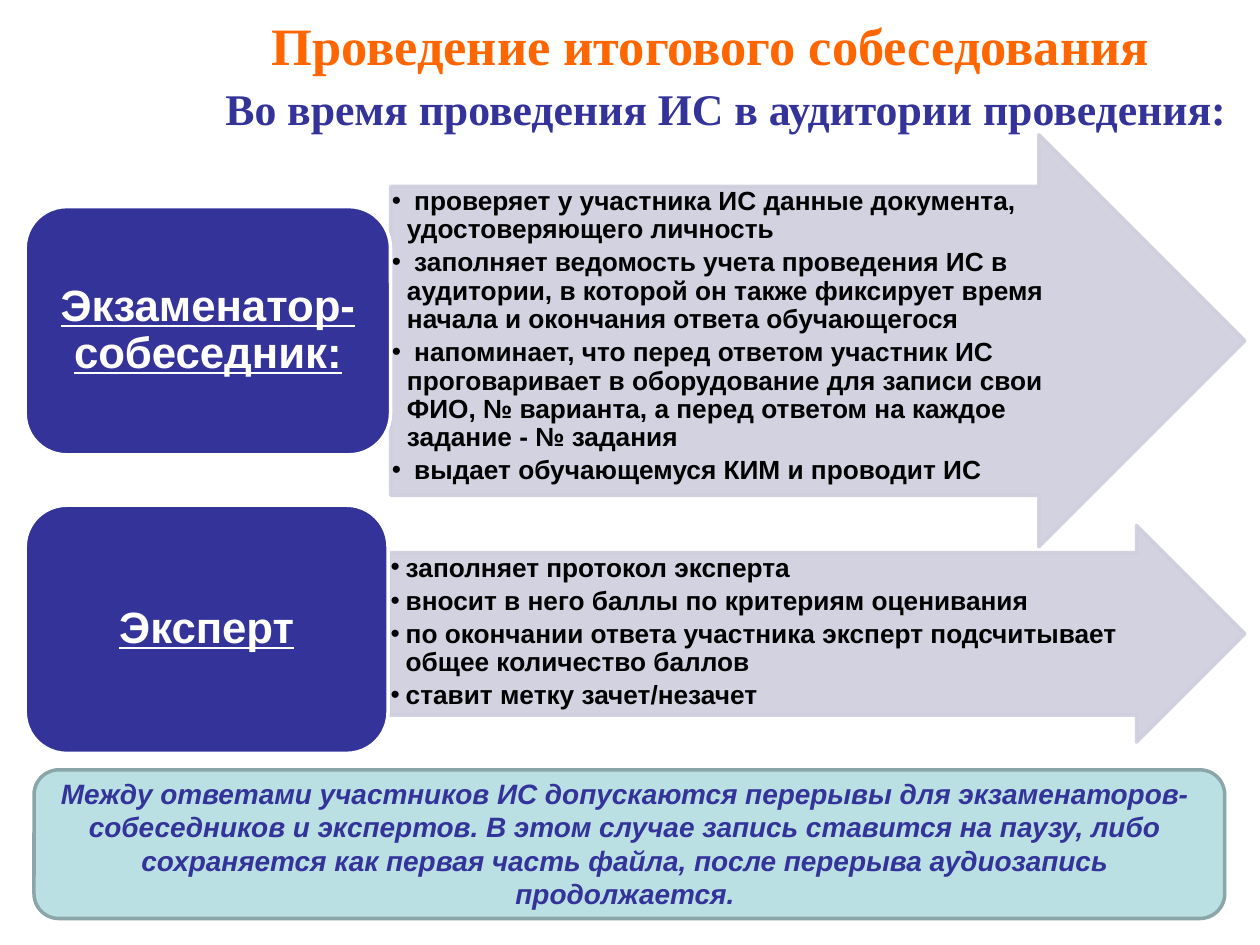
import dataclasses

import pptx
import pptx.dml.color
import pptx.enum.shapes
import pptx.enum.text
import pptx.oxml
import pptx.oxml.ns
import pptx.util

Inches = pptx.util.Inches
Pt = pptx.util.Pt
Shapes = pptx.enum.shapes.MSO_SHAPE
Align = pptx.enum.text.PP_ALIGN
Anchor = pptx.enum.text.MSO_ANCHOR


@dataclasses.dataclass(frozen=True)
class Theme:
    orange: str = "FF6600"
    navy: str = "333399"
    lavender: str = "CECEDE"
    aqua: str = "BBE0E3"
    aqua_edge: str = "8AA6A8"
    white: str = "FFFFFF"
    black: str = "000000"
    heading_font: str = "Times New Roman"
    body_font: str = "Arial"
    title_size: int = 30
    subtitle_size: int = 25
    role_size: int = 25
    duty_size: int = 15
    note_size: int = 16
    line_width: int = 2


THEME = Theme()

EXAMINER_DUTIES = [
    " проверяет у участника ИС данные документа, удостоверяющего личность",
    " заполняет ведомость учета проведения ИС в аудитории, в которой он также "
    "фиксирует время начала и окончания ответа обучающегося",
    " напоминает, что перед ответом участник ИС проговаривает в оборудование для "
    "записи свои ФИО, № варианта, а перед ответом на каждое задание - № задания",
    " выдает обучающемуся КИМ и проводит ИС",
]
EXPERT_DUTIES = [
    "заполняет протокол эксперта",
    "вносит в него баллы по критериям оценивания",
    "по окончании ответа участника эксперт подсчитывает общее количество баллов",
    "ставит метку зачет/незачет",
]
NOTE = (
    "Между ответами участников ИС допускаются перерывы для "
    "экзаменаторов-собеседников и экспертов. В этом случае запись ставится на "
    "паузу, либо сохраняется как первая часть файла, после перерыва аудиозапись "
    "продолжается."
)


def rgb(color):
    return pptx.dml.color.RGBColor.from_string(color)


def place(shape, box):
    shape.left, shape.top, shape.width, shape.height = map(Inches, box)


def set_frame(shape, anchor, horizontal=0.1, vertical=0.05):
    frame = shape.text_frame
    frame.word_wrap = True
    frame.auto_size = pptx.enum.text.MSO_AUTO_SIZE.NONE
    frame.vertical_anchor = anchor
    frame.margin_left = frame.margin_right = Inches(horizontal)
    frame.margin_top = frame.margin_bottom = Inches(vertical)
    return frame


def add_run(paragraph, text, font_name, size, color, italic=False, underline=False):
    run = paragraph.add_run()
    run.text = text
    run.font.name = font_name
    run.font.size = Pt(size)
    run.font.color.rgb = rgb(color)
    run.font.bold = True
    run.font.italic = italic
    run.font.underline = underline


def add_shape(slide, preset, box, fill, line):
    shape = slide.shapes.add_shape(preset, *map(Inches, box))
    shape.shadow.inherit = False
    shape.fill.solid()
    shape.fill.fore_color.rgb = rgb(fill)
    shape.line.color.rgb = rgb(line)
    shape.line.width = Pt(THEME.line_width)
    return shape


def add_arrow(slide, box):
    arrow = add_shape(slide, Shapes.RIGHT_ARROW, box, THEME.lavender, THEME.lavender)
    arrow.adjustments[0] = 0.75
    arrow.adjustments[1] = 0.5
    for color in arrow.element.spPr.iter(pptx.oxml.ns.qn("a:srgbClr")):
        color.append(pptx.oxml.parse_xml(
            f'<a:alpha {pptx.oxml.ns.nsdecls("a")} val="90000"/>'))
    return arrow


def add_bullet(paragraph, indent):
    properties = paragraph._p.get_or_add_pPr()
    properties.set("marL", str(Inches(indent)))
    properties.set("indent", str(-Inches(indent)))
    properties.append(pptx.oxml.parse_xml(
        f'<a:buChar {pptx.oxml.ns.nsdecls("a")} char="•"/>'))


def fill_duties(placeholder, box, duties):
    place(placeholder, box)
    frame = set_frame(placeholder, Anchor.TOP, 0.01, 0.01)
    for index, duty in enumerate(duties):
        paragraph = frame.add_paragraph() if index else frame.paragraphs[0]
        add_bullet(paragraph, 0.12)
        paragraph.alignment = Align.LEFT
        paragraph.line_spacing = 0.9
        paragraph.space_before = Pt(0)
        paragraph.space_after = Pt(2.7)
        add_run(paragraph, duty, THEME.body_font, THEME.duty_size, THEME.black)


def add_role(slide, box, text):
    role = add_shape(slide, Shapes.ROUNDED_RECTANGLE, box, THEME.navy, THEME.white)
    paragraph = set_frame(role, Anchor.MIDDLE).paragraphs[0]
    paragraph.alignment = Align.CENTER
    paragraph.line_spacing = 0.9
    add_run(paragraph, text, THEME.body_font, THEME.role_size, THEME.white,
            underline=True)


def add_duty_row(slide, placeholder, arrow_box, duties_box, duties, role_box, role):
    arrow = add_arrow(slide, arrow_box)
    fill_duties(placeholder, duties_box, duties)
    arrow.element.addnext(placeholder.element)
    add_role(slide, role_box, role)


def fill_title(title):
    place(title, (1.14, -0.27, 9, 1.25))
    paragraph = set_frame(title, Anchor.MIDDLE).paragraphs[0]
    paragraph.alignment = Align.CENTER
    add_run(paragraph, "Проведение итогового собеседования",
            THEME.heading_font, THEME.title_size, THEME.orange)


def add_text(slide, box, text, alignment, font_name, size, italic=False):
    text_box = slide.shapes.add_textbox(*map(Inches, box))
    paragraph = set_frame(text_box, Anchor.TOP).paragraphs[0]
    paragraph.alignment = alignment
    add_run(paragraph, text, font_name, size, THEME.navy, italic=italic)


def main():
    presentation = pptx.Presentation()
    presentation.slide_width = Inches(10)
    presentation.slide_height = Inches(7.5)
    slide = presentation.slides.add_slide(presentation.slide_layouts[3])
    title, examiner_list, expert_list = list(slide.placeholders)

    fill_title(title)
    add_duty_row(slide, examiner_list, (3.1, 1.07, 6.78, 3.27),
                 (3.1, 1.48, 5.55, 2.45), EXAMINER_DUTIES,
                 (0.2, 1.64, 2.9, 1.97), "Экзаменатор-собеседник:")
    add_duty_row(slide, expert_list, (3.09, 4.17, 6.79, 1.72),
                 (3.09, 4.39, 6.15, 1.29), EXPERT_DUTIES,
                 (0.2, 4.01, 2.88, 1.97), "Эксперт")
    add_text(slide, (1.69, 0.6, 8.19, 0.52),
             "Во время проведения ИС в аудитории проведения:",
             Align.LEFT, THEME.heading_font, THEME.subtitle_size)
    add_shape(slide, Shapes.ROUNDED_RECTANGLE, (0.27, 6.11, 9.45, 1.18),
              THEME.aqua, THEME.aqua_edge)
    add_text(slide, (0.2, 6.11, 9.52, 1.18), NOTE,
             Align.CENTER, THEME.body_font, THEME.note_size, italic=True)
    presentation.save("out.pptx")


if __name__ == "__main__":
    main()
